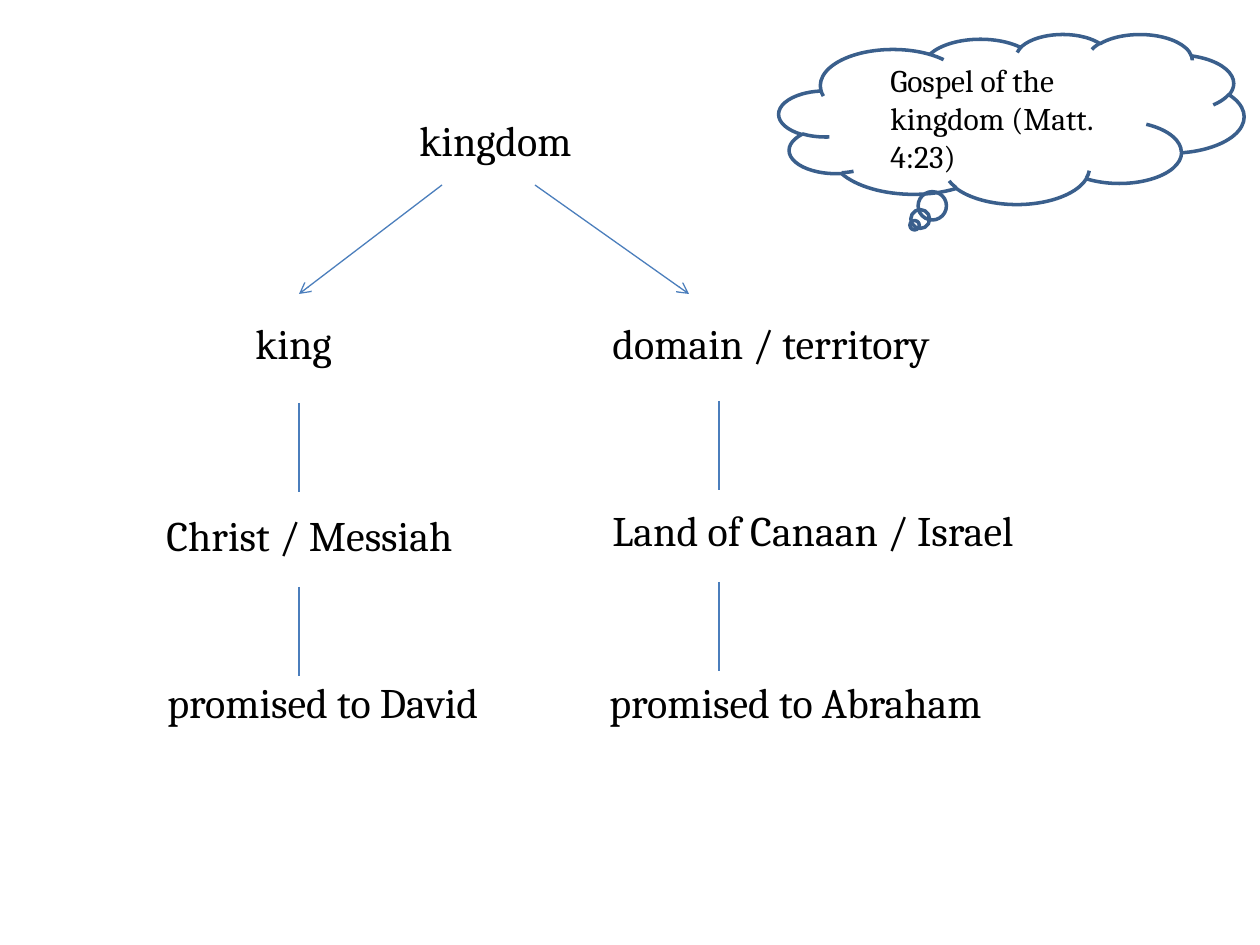
from lxml import etree
from pptx import Presentation
from pptx.dml.color import RGBColor
from pptx.enum.shapes import MSO_CONNECTOR, MSO_SHAPE
from pptx.oxml.ns import qn
from pptx.util import Emu, Pt

STRAIGHT = MSO_CONNECTOR.STRAIGHT
CLOUD = MSO_SHAPE.CLOUD_CALLOUT
BLACK = RGBColor(0x00, 0x00, 0x00)
BLUE = RGBColor(0x4B, 0x7E, 0xBC)
NAVY = RGBColor(0x3A, 0x5F, 0x8C)
SCALE = 914400 / 126


def px(num):
    return Emu(round(num * SCALE))


def put_text(frame, text, size=24, font="Cambria", color=BLACK):
    frame.word_wrap = True
    run = frame.paragraphs[0].add_run()
    run.text = text
    run.font.size = Pt(size)
    run.font.name = font
    run.font.color.rgb = color


class Chart:
    """Draw the kingdom tree on one slide."""

    def __init__(self, slide):
        self.shapes = slide.shapes

    def label(self, text, left, top, width, height=63, **style):
        box = self.shapes.add_textbox(px(left), px(top), px(width), px(height))
        put_text(box.text_frame, text, **style)

    def line(self, start, end, arrow=False):
        line = self.shapes.add_connector(STRAIGHT, *map(px, start + end))
        line.line.color.rgb = BLUE
        line.line.width = Pt(0.75)
        if arrow:
            etree.SubElement(line.line._get_or_add_ln(), qn("a:tailEnd"), type="arrow")
        etree.SubElement(line._element.spPr, qn("a:effectLst"))

    def cloud(self, left, top, width, height):
        cloud = self.shapes.add_shape(CLOUD, px(left), px(top), px(width), px(height))
        cloud.shadow.inherit = False
        cloud.fill.background()
        cloud.line.color.rgb = NAVY
        cloud.line.width = Pt(2)


def main():
    deck = Presentation()
    deck.slide_width, deck.slide_height = px(1260), px(945)
    chart = Chart(deck.slides.add_slide(deck.slide_layouts[6]))

    for label in (
        ("kingdom", 407, 108, 194),
        ("king", 243, 311, 179),
        ("domain / territory", 600, 311, 357),
        ("Christ / Messiah", 154, 503, 335),
        ("Land of Canaan / Israel", 600, 498, 456),
        ("promised to David", 155, 670, 381),
        ("promised to Abraham", 597, 670, 480),
    ):
        chart.label(*label)

    for start, end in ((442, 299), (535, 689)):
        chart.line((start, 185), (end, 294), arrow=True)

    for left, tops in ((299, (403, 587)), (719, (401, 582))):
        for top in tops:
            chart.line((left, top), (left, top + 89))

    chart.cloud(779, 34, 465, 170)
    chart.label("Gospel of the kingdom (Matt. 4:23)", 878, 55, 258, 127, size=18)
    deck.save("out.pptx")


if __name__ == "__main__":
    main()
